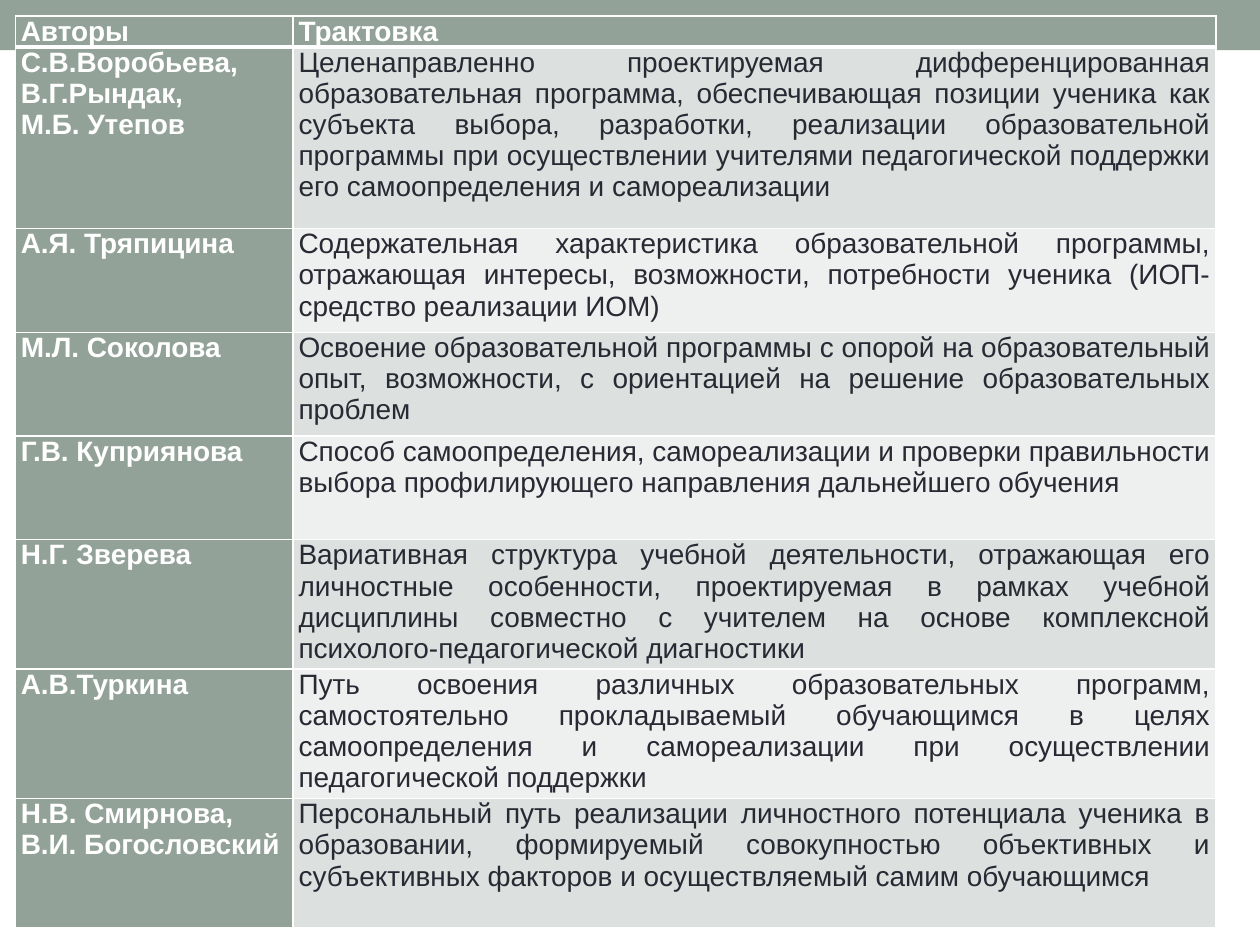
from dataclasses import dataclass

from lxml.etree import SubElement
from pptx import Presentation
from pptx.dml.color import RGBColor as Color
from pptx.enum.shapes import MSO_SHAPE as Shape
from pptx.enum.text import PP_ALIGN as Align
from pptx.oxml.ns import qn
from pptx.util import Cm, Pt


@dataclass(frozen=True)
class Theme:
    font: str = "Arial"
    text_size: int = 16
    sage: str = "93A299"
    light: str = "FFFFFF"
    dark: str = "292934"
    bands: tuple = ("DCE0DE", "EEF0EF")
    border: int = 1
    header_border: int = 3


HEADER = ("Авторы", "Трактовка")
# Authors (one per line), interpretation, row height in cm
INTERPRETATIONS = [
    ("С.В.Воробьева,\nВ.Г.Рындак,\nМ.Б. Утепов",
     "Целенаправленно проектируемая дифференцированная образовательная программа, "
     "обеспечивающая позиции ученика как субъекта выбора, разработки, реализации "
     "образовательной программы при осуществлении учителями педагогической поддержки "
     "его самоопределения и самореализации", 3.66),
    ("А.Я. Тряпицина",
     "Содержательная характеристика образовательной программы, отражающая интересы, "
     "возможности, потребности ученика (ИОП-средство реализации ИОМ)", 2.09),
    ("М.Л. Соколова",
     "Освоение образовательной программы с опорой на образовательный опыт, "
     "возможности, с ориентацией на решение образовательных проблем", 2.09),
    ("Г.В. Куприянова ",
     "Способ самоопределения, самореализации и проверки правильности выбора "
     "профилирующего направления дальнейшего обучения", 2.09),
    ("Н.Г. Зверева",
     "Вариативная структура учебной деятельности, отражающая его личностные "
     "особенности, проектируемая в рамках учебной дисциплины совместно с учителем "
     "на основе комплексной психолого-педагогической диагностики", 2.61),
    ("А.В.Туркина",
     "Путь освоения различных образовательных программ, самостоятельно "
     "прокладываемый обучающимся в целях самоопределения и самореализации при "
     "осуществлении педагогической поддержки", 2.61),
    ("Н.В. Смирнова,\nВ.И. Богословский",
     "Персональный путь реализации личностного потенциала ученика в образовании, "
     "формируемый совокупностью объективных и субъективных факторов и "
     "осуществляемый самим обучающимся", 2.61),
]


class SlideBuilder:
    def __init__(self, slide, theme):
        self.slide = slide
        self.theme = theme

    def band(self, left, top, width, height):
        shape = self.slide.shapes.add_shape(
            Shape.RECTANGLE, Cm(left), Cm(top), Cm(width), Cm(height))
        shape.shadow.inherit = False
        shape.fill.solid()
        shape.fill.fore_color.rgb = Color.from_string(self.theme.sage)
        shape.line.fill.background()

    def table(self, left, top, widths, heights):
        table = self.slide.shapes.add_table(
            len(heights), len(widths), Cm(left), Cm(top),
            Cm(sum(widths)), Cm(sum(heights))).table
        for column, width in zip(table.columns, widths):
            column.width = Cm(width)
        for row, height in zip(table.rows, heights):
            row.height = Cm(height)
        return table

    def cell(self, cell, text, fill, color, bold, align=Align.JUSTIFY,
             top_border=None, bottom_border=None):
        cell.margin_left = cell.margin_right = Cm(0.11)
        cell.margin_top = cell.margin_bottom = 0
        thin = self.theme.border
        self.borders(cell, L=thin, R=thin, T=top_border or thin, B=bottom_border or thin)
        cell.fill.solid()
        cell.fill.fore_color.rgb = Color.from_string(fill)
        frame = cell.text_frame
        for index, line in enumerate(text.split("\n")):
            paragraph = frame.add_paragraph() if index else frame.paragraphs[0]
            paragraph.alignment = align
            self.run(paragraph, line, color, bold)

    def borders(self, cell, **widths):
        properties = cell._tc.get_or_add_tcPr()
        for side, width in widths.items():
            line = SubElement(properties, qn(f"a:ln{side}"), w=str(Pt(width)))
            fill = SubElement(line, qn("a:solidFill"))
            SubElement(fill, qn("a:srgbClr"), val=self.theme.light)

    def run(self, paragraph, text, color, bold):
        run = paragraph.add_run()
        run.text = text
        run.font.name = self.theme.font
        run.font.size = Pt(self.theme.text_size)
        run.font.bold = bold
        run.font.color.rgb = Color.from_string(color)


def main():
    presentation = Presentation()
    presentation.slide_width = Cm(25.4)
    presentation.slide_height = Cm(19.05)
    theme = Theme()
    builder = SlideBuilder(
        presentation.slides.add_slide(presentation.slide_layouts[6]), theme)

    builder.band(0, 0, 25.4, 1.01)
    heights = [0.63] + [height for _, _, height in INTERPRETATIONS]
    table = builder.table(0.31, 0.32, (5.6, 18.6), heights)
    for column, title in enumerate(HEADER):
        builder.cell(table.cell(0, column), title, theme.sage, theme.light, True,
                     bottom_border=theme.header_border)

    last = len(INTERPRETATIONS)
    for row, (authors, meaning, _) in enumerate(INTERPRETATIONS, start=1):
        top_border = theme.header_border if row == 1 else theme.border
        builder.cell(table.cell(row, 0), authors, theme.sage, theme.light, True,
                     align=Align.LEFT if row == last else Align.JUSTIFY,
                     top_border=top_border)
        builder.cell(table.cell(row, 1), meaning, theme.bands[(row - 1) % 2],
                     theme.dark, False, top_border=top_border)

    presentation.save("out.pptx")


if __name__ == "__main__":
    main()
